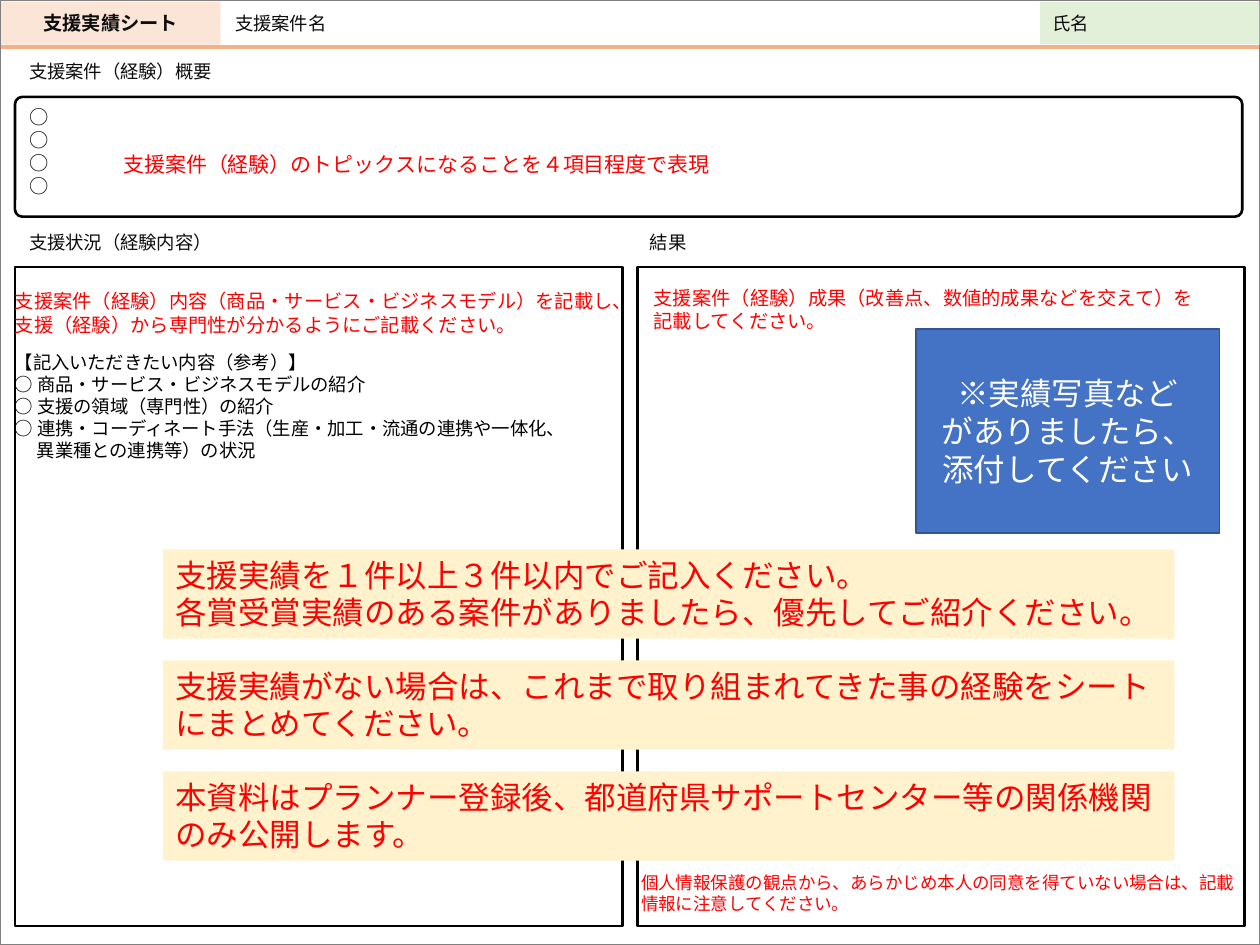
from lxml import etree
from pptx import Presentation
from pptx.dml.color import RGBColor
from pptx.enum.shapes import MSO_CONNECTOR, MSO_SHAPE
from pptx.enum.text import MSO_ANCHOR, MSO_AUTO_SIZE, PP_ALIGN
from pptx.oxml.ns import qn
from pptx.util import Pt

RECT, ROUND = MSO_SHAPE.RECTANGLE, MSO_SHAPE.ROUNDED_RECTANGLE
TOP, MIDDLE = MSO_ANCHOR.TOP, MSO_ANCHOR.MIDDLE
LEFT, CENTER = PP_ALIGN.LEFT, PP_ALIGN.CENTER
JP, LATIN = "Noto Sans CJK JP", "Calibri"
INK, RED, BLACK, WHITE = "0D0D0D", "FF0000", "000000", "FFFFFF"


def color(value):
    return RGBColor.from_string(value)


def place(sp, box):
    sp.left, sp.top, sp.width, sp.height = (Pt(v) for v in box)


def add_box(s, box, fill=None, line=None, weight=1.5, kind=RECT):
    sp = s.shapes.add_shape(kind, *(Pt(v) for v in box))
    sp.shadow.inherit = False
    if fill:
        sp.fill.solid()
        sp.fill.fore_color.rgb = color(fill)
    else:
        sp.fill.background()
    if line:
        sp.line.color.rgb = color(line)
        sp.line.width = Pt(weight)
    else:
        sp.line.fill.background()
    return sp


def write(sp, lines, size, ink, anchor=TOP, align=LEFT, font=JP, bold=False):
    tf = sp.text_frame
    tf.word_wrap = True
    tf.auto_size = MSO_AUTO_SIZE.NONE
    tf.vertical_anchor = anchor
    for i, text in enumerate(lines):
        p = tf.paragraphs[0] if i == 0 else tf.add_paragraph()
        style(p, text, size, ink, align, font, bold)
    return tf


def style(p, text, size, ink, align=LEFT, font=JP, bold=False):
    p.alignment = align
    p.line_spacing = Pt(size * 1.2)
    p.space_before = Pt(0)
    r = p.add_run()
    r.text = text
    r.font.size = Pt(size)
    r.font.name = font
    r.font.bold = bold
    r.font.color.rgb = color(ink)
    etree.SubElement(r.font._element, qn("a:ea"), typeface=font)


def indent(p, left):
    pPr = p._p.get_or_add_pPr()
    pPr.set("marL", str(Pt(left)))
    pPr.set("indent", "0")


def add_text(s, box, lines, size, ink, anchor=TOP):
    tb = s.shapes.add_textbox(*(Pt(v) for v in box))
    return write(tb, lines, size, ink, anchor)


def add_header(s, x, y, w, h):
    side = 125.3
    title = s.shapes.title
    place(title, (x, y, side, h))
    title.fill.solid()
    title.fill.fore_color.rgb = color("FBE5D6")
    write(title, ["支援実績シート"], 11, INK, MIDDLE, CENTER, bold=True)
    add_text(s, (x + side + 1.4, y, w - 2 * side, h), ["支援案件名"], 10.5, INK, MIDDLE)
    name = add_box(s, (x + w - side, y, side, h), "E2F0D9")
    write(name, ["氏名"], 10.5, INK, MIDDLE)
    rule = s.shapes.add_connector(
        MSO_CONNECTOR.STRAIGHT, Pt(x), Pt(y + h + 1.3), Pt(x + w), Pt(y + h + 1.3))
    rule.line.color.rgb = color("F4B183")
    rule.line.width = Pt(2.25)
    etree.SubElement(rule._element.spPr, qn("a:effectLst"))


def add_heading(s, x, y, text):
    add_text(s, (x, y, 130, 20), [text], 10.5, INK)


def add_summary(s, x, y, w, h):
    add_heading(s, x + 1, y - 24.5, "支援案件（経験）概要")
    frame = add_box(s, (x, y, w, h), line=BLACK, kind=ROUND)
    frame.adjustments[0] = 0.06
    body = s.placeholders[1]
    place(body, (x + 1, y + 1, 60, h - 2))
    tf = write(body, ["○"] * 4, 11, INK)
    for p in tf.paragraphs:
        indent(p, 0)
        etree.SubElement(p._p.get_or_add_pPr(), qn("a:buNone"))
    add_text(s, (x + 54.7, y + 27.4, 360, 22),
             ["支援案件（経験）のトピックスになることを４項目程度で表現"], 12, RED)


def add_situation(s, x, y, w, h):
    add_heading(s, x + 1, y - 23.8, "支援状況（経験内容）")
    add_box(s, (x, y, w, h), line=BLACK)
    tf = add_text(s, (x - 7.2, y + 9.4, w + 33, 115), [
        "支援案件（経験）内容（商品・サービス・ビジネスモデル）を記載し、",
        "支援（経験）から専門性が分かるようにご記載ください。"], 11, RED)
    guide = [
        "【記入いただきたい内容（参考）】",
        "○ 商品・サービス・ビジネスモデルの紹介",
        "○ 支援の領域（専門性）の紹介",
        "○ 連携・コーディネート手法（生産・加工・流通の連携や一体化、",
        "異業種との連携等）の状況"]
    added = []
    for text in guide:
        p = tf.add_paragraph()
        style(p, text, 10.5, BLACK)
        added.append(p)
    added[0].space_before = Pt(8.4)
    indent(added[-1], 12.6)


def add_result(s, x, y, w, h):
    add_heading(s, x, y - 23.8, "結果")
    add_box(s, (x, y, w, h), line=BLACK)
    add_text(s, (x + 2.2, y + 7.2, 327, 42),
             ["支援案件（経験）成果（改善点、数値的成果などを交えて）を記載してください。"], 11, RED)
    photo = add_box(s, (x + 159, y + 35.3, 173.5, 116.6), "4472C4", "325491", 1)
    write(photo, ["※実績写真など", "がありましたら、", "添付してください"],
          18, WHITE, MIDDLE, CENTER, LATIN)


def add_notices(s, x, y, w, h, pitch):
    notices = [
        ["支援実績を１件以上３件以内でご記入ください。",
         "各賞受賞実績のある案件がありましたら、優先してご紹介ください。"],
        ["支援実績がない場合は、これまで取り組まれてきた事の経験をシートにまとめてください。"],
        ["本資料はプランナー登録後、都道府県サポートセンター等の関係機関のみ公開します。"]]
    for i, lines in enumerate(notices):
        banner = add_box(s, (x, y + i * pitch, w, h), "FFF2CC")
        write(banner, lines, 18, RED)


def add_privacy_note(s, x, y, w, h):
    add_text(s, (x, y, w, h),
             ["個人情報保護の観点から、あらかじめ本人の同意を得ていない場合は、記載情報に注意してください。"],
             10, RED)


def main():
    prs = Presentation()
    prs.slide_width, prs.slide_height = Pt(720), Pt(540)
    s = prs.slides.add_slide(prs.slide_layouts[1])
    add_box(s, (0, 0, 720, 540), line="808080", weight=0.75)
    add_header(s, 0.7, 1, 719, 24.5)
    add_summary(s, 8.6, 55.4, 701.3, 68.4)
    add_situation(s, 8.6, 152.6, 347, 376.6)
    add_result(s, 364.3, 152.6, 347, 376.6)
    add_notices(s, 93.1, 314, 578, 51, 63.4)
    add_privacy_note(s, 359.3, 494.6, 360, 32)
    prs.save("out.pptx")


if __name__ == "__main__":
    main()
